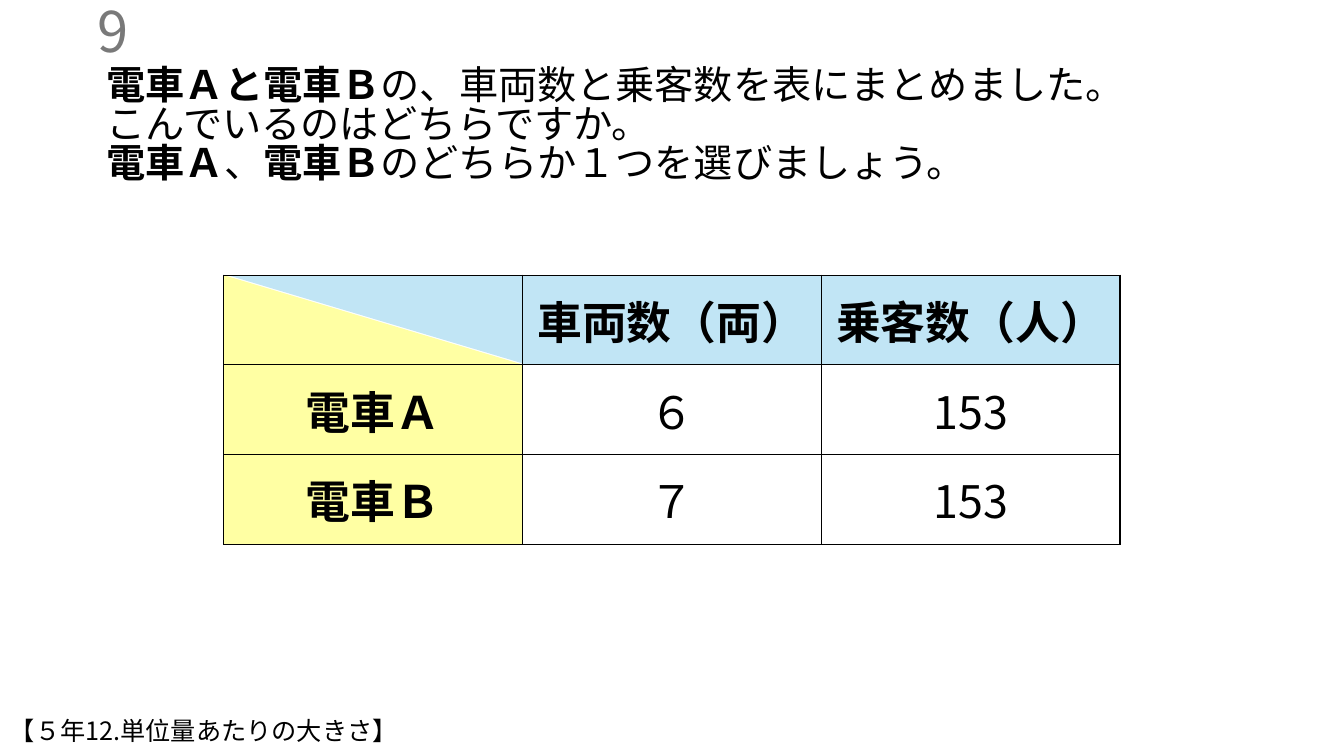
from lxml import etree
from pptx import Presentation
from pptx.dml.color import RGBColor
from pptx.enum import shapes, text
from pptx.oxml.ns import qn
from pptx.util import Inches, Pt

FONT = "Noto Sans CJK JP"
BLACK = RGBColor(0x00, 0x00, 0x00)
GRAY = RGBColor(0x79, 0x79, 0x79)
YELLOW = RGBColor(0xFF, 0xFF, 0xA3)
BLUE = RGBColor(0xC1, 0xE5, 0xF5)


def write(paragraph, parts, size, color=BLACK):
    """Add (wording, bold) runs with the Latin and East Asian fonts set."""
    for wording, bold in parts:
        run = paragraph.add_run()
        run.text = wording
        run.font.size = Pt(size)
        run.font.bold = bold
        run.font.name = FONT
        run.font.color.rgb = color
        etree.SubElement(run._r.get_or_add_rPr(), qn("a:ea"), typeface=FONT)


def draw_borders(cell):
    """Give a cell thin black lines on all four sides."""
    properties = cell._tc.get_or_add_tcPr()
    for index, side in enumerate(("lnL", "lnR", "lnT", "lnB")):
        line = etree.Element(qn(f"a:{side}"), w=str(Pt(1)))
        fill = etree.SubElement(line, qn("a:solidFill"))
        etree.SubElement(fill, qn("a:srgbClr"), val=str(BLACK))
        properties.insert(index, line)


prs = Presentation()
prs.slide_width = Inches(13.33)
prs.slide_height = Inches(7.5)
slide = prs.slides.add_slide(prs.slide_layouts[6])

# Two triangles that split the corner cell
corner = slide.shapes.add_group_shape()
for left, rotation, color in ((2.22, 0, YELLOW), (2.26, 180, BLUE)):
    triangle = corner.shapes.add_shape(
        shapes.MSO_SHAPE.RIGHT_TRIANGLE,
        Inches(left), Inches(2.73), Inches(2.94), Inches(0.88))
    triangle.rotation = rotation
    triangle.shadow.inherit = False
    triangle.fill.solid()
    triangle.fill.fore_color.rgb = color
    triangle.line.fill.background()

# Question
question = slide.shapes.add_textbox(
    Inches(0.96), Inches(0.59), Inches(11.53), Inches(1.51)).text_frame
question.word_wrap = True
question.margin_top = Inches(0.09)
question_lines = [
    [("電車Ａと電車Ｂ", True), ("の、車両数と乗客数を表にまとめました。", False)],
    [("こんでいるのはどちらですか。", False)],
    [("電車Ａ", True), ("、", False), ("電車Ｂ", True),
     ("のどちらか１つを選びましょう。", False)],
]
for index, parts in enumerate(question_lines):
    paragraph = question.add_paragraph() if index else question.paragraphs[0]
    paragraph.line_spacing = 0.83
    write(paragraph, parts, 28)

# Question number
number = slide.shapes.add_textbox(
    Inches(-1.63), Inches(0.1), Inches(3), Inches(0.4)).text_frame
number.word_wrap = True
number.vertical_anchor = text.MSO_ANCHOR.MIDDLE
number.paragraphs[0].alignment = text.PP_ALIGN.RIGHT
write(number.paragraphs[0], [("9", False)], 40, GRAY)

# Table of cars and passengers
rows = [
    ["", "車両数（両）", "乗客数（人）"],
    ["電車Ａ", "６", "153"],
    ["電車Ｂ", "７", "153"],
]
trains = slide.shapes.add_table(
    3, 3, Inches(2.22), Inches(2.73), Inches(8.89), Inches(2.67)).table
trains.horz_banding = False
trains.first_row = False
for r, row in enumerate(rows):
    for c, wording in enumerate(row):
        cell = trains.cell(r, c)
        cell.vertical_anchor = text.MSO_ANCHOR.MIDDLE
        header = r == 0 or c == 0
        if header and wording:
            cell.fill.solid()
            cell.fill.fore_color.rgb = BLUE if r == 0 else YELLOW
        else:
            cell.fill.background()
        draw_borders(cell)
        if wording:
            cell.text_frame.paragraphs[0].alignment = text.PP_ALIGN.CENTER
            write(cell.text_frame.paragraphs[0], [(wording, header)], 32)

# Unit label
unit = slide.shapes.add_textbox(
    Inches(0), Inches(7.1), Inches(7.49), Inches(0.4)).text_frame
unit.word_wrap = True
unit.paragraphs[0].line_spacing = 0.83
write(unit.paragraphs[0], [("【５年12.単位量あたりの大きさ】", False)], 18)

prs.save("out.pptx")
